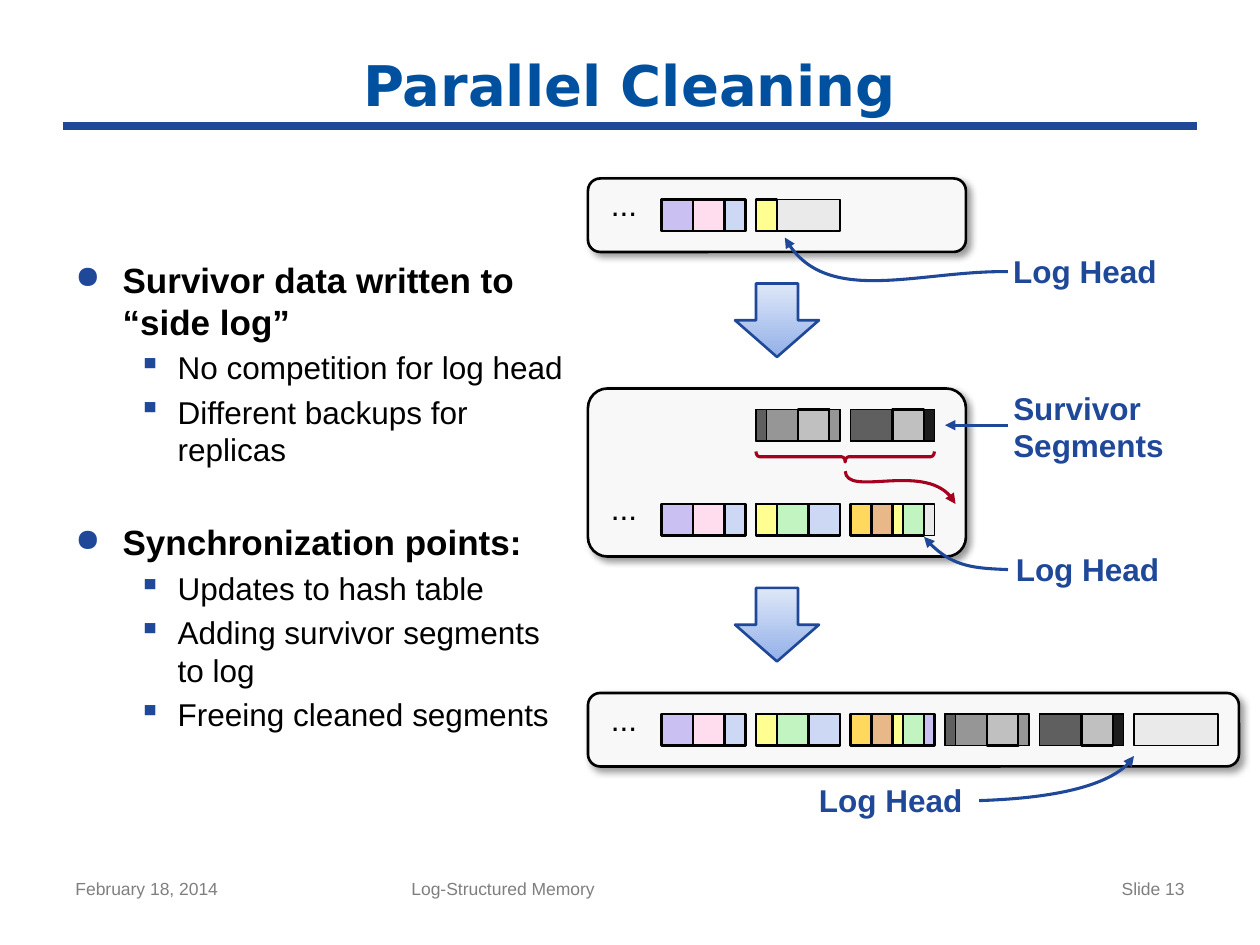
from lxml.etree import SubElement
from pptx import Presentation
from pptx.dml.color import RGBColor
from pptx.enum.shapes import MSO_CONNECTOR, MSO_SHAPE
from pptx.enum.text import MSO_ANCHOR, PP_ALIGN
from pptx.oxml.ns import qn
from pptx.util import Pt

PX = 9525
UNIT = 8
COLORS = {
    "blue": "1F4899", "title": "0050A0", "red": "A5001E", "black": "000000",
    "footer": "7F7F7F", "frame": "F8F8F8", "free": "EAEAEA",
    "arrow_top": "DEE7F8", "arrow_bottom": "93B0E9",
    "violet": "CBC0F2", "pink": "FFDDEE", "sky": "CCD8F4", "yellow": "FFFF91",
    "green": "C2F4C2", "gold": "FFD85D", "tan": "E8B888",
    "dark": "5F5F5F", "mid": "969696", "light": "C0C0C0", "ink": "1C1C1C",
}
RGB = {name: RGBColor.from_string(value) for name, value in COLORS.items()}
THIN_OUTLINES = {"free", "dark", "mid", "ink"}

prs = Presentation()
prs.slide_width, prs.slide_height = 960 * PX, 720 * PX
slide = prs.slides.add_slide(prs.slide_layouts[6])
shapes = slide.shapes


def add_preset(kind, box, fill, line, width):
    shape = shapes.add_shape(kind, *[v * PX for v in box])
    shape.shadow.inherit = False
    if fill:
        shape.fill.solid()
        shape.fill.fore_color.rgb = RGB[fill]
    else:
        shape.fill.background()
    shape.line.color.rgb = RGB[line]
    shape.line.width = Pt(width)
    return shape


def add_text(lines, box, size, color, bold=False, align=PP_ALIGN.LEFT,
             font="Arial", wrap=True, inset=True):
    frame = shapes.add_textbox(*[v * PX for v in box]).text_frame
    frame.word_wrap = wrap
    if not inset:
        frame.margin_left = frame.margin_right = 0
        frame.margin_top = frame.margin_bottom = 0
    for i, line in enumerate(lines):
        paragraph = frame.add_paragraph() if i else frame.paragraphs[0]
        paragraph.alignment = align
        run = paragraph.add_run()
        run.text = line
        run.font.size, run.font.bold, run.font.name = Pt(size), bold, font
        run.font.color.rgb = RGB[color]
    return frame


header_rule = shapes.add_connector(MSO_CONNECTOR.STRAIGHT, 48 * PX, 96 * PX, 912 * PX, 96 * PX)
header_rule.line.color.rgb = RGB["blue"]
header_rule.line.width = Pt(4.5)
SubElement(header_rule.element.spPr, qn("a:effectLst"))

for box, corner in [
    ((448, 528, 496, 56), 0.167),
    ((448, 296, 288, 128), 0.116),
    ((448, 136, 288, 56), 0.167),
]:
    log_frame = add_preset(MSO_SHAPE.ROUNDED_RECTANGLE, box, "frame", "black", 1.5)
    log_frame.adjustments[0] = corner
    effects = log_frame.element.spPr.find(qn("a:effectLst"))
    shadow = SubElement(effects, qn("a:outerShdw"), blurRad=str(Pt(4)), dist=str(Pt(3)),
                        dir="2700000", algn="tl", rotWithShape="0")
    shadow_color = SubElement(shadow, qn("a:srgbClr"), val=COLORS["black"])
    SubElement(shadow_color, qn("a:alpha"), val="40000")

title = add_text(["Parallel Cleaning"], (48, 32, 864, 64), 32, "title", True,
                 PP_ALIGN.CENTER, "DejaVu Sans")
title.vertical_anchor = MSO_ANCHOR.MIDDLE

points = [
    (0, "Survivor data written to “side log”", 6),
    (1, "No competition for log head", 3.6),
    (1, "Different backups for replicas", 3.6),
    (0, "Synchronization points:", 30),
    (1, "Updates to hash table", 3.6),
    (1, "Adding survivor segments to log", 3.6),
    (1, "Freeing cleaned segments", 3.6),
]
LEVELS = [(20, True, 36, 36, "●", 90), (18, False, 78, 30, "▪", 100)]
body = add_text([text for _, text, _ in points], (48, 192, 392, 488), 20, "black")
for paragraph, (level, _, gap) in zip(body.paragraphs, points):
    size, bold, margin, hanging, bullet, bullet_size = LEVELS[level]
    paragraph.level = level
    paragraph.space_before = Pt(gap)
    paragraph.runs[0].font.size = Pt(size)
    paragraph.runs[0].font.bold = bold
    props = paragraph._p.get_or_add_pPr()
    props.set("marL", str(margin * PX))
    props.set("indent", str(-hanging * PX))
    SubElement(SubElement(props, qn("a:buClr")), qn("a:srgbClr"), val=COLORS["blue"])
    SubElement(props, qn("a:buSzPct"), val=str(bullet_size * 1000))
    SubElement(props, qn("a:buChar"), char=bullet)

for text, left, width, align in [
    ("February 18, 2014", 48, 224, PP_ALIGN.LEFT),
    ("Log-Structured Memory", 304, 360, PP_ALIGN.LEFT),
    ("Slide 13", 688, 224, PP_ALIGN.RIGHT),
]:
    add_text([text], (left, 664, width, 41), 10, "footer", align=align)

first = [("violet", 3), ("pink", 3), ("sky", 2)]
second = [("yellow", 2), ("green", 3), ("sky", 3)]
third = [("gold", 2), ("tan", 2), ("yellow", 1), ("green", 2)]
survivors = [
    [("dark", 1), ("mid", 3), ("light", 3), ("mid", 1)],
    [("dark", 4), ("light", 3), ("ink", 1)],
]
log_rows = [
    (152, 0, [first, [("yellow", 2)]]),
    (312, 1, survivors),
    (384, 0, [first, second, third]),
    (544, 0, [first, second, third + [("violet", 1)], *survivors, []]),
]
for top, first_slot, segments in log_rows:
    for slot, entries in enumerate(segments, first_slot):
        left = 504 + 72 * slot
        add_preset(MSO_SHAPE.RECTANGLE, (left, top, 8 * UNIT, 24), "free", "black", 1)
        for color, units in entries:
            outline = 1 if color in THIN_OUTLINES else 1.5
            add_preset(MSO_SHAPE.RECTANGLE, (left, top, units * UNIT, 24), color, "black", outline)
            left += units * UNIT

for top in (136, 368, 529):
    add_text(["..."], (456, top, 39, 38), 18, "black", align=PP_ALIGN.CENTER, wrap=False)

for lines, box in [
    (["Log Head"], (772, 192, 110, 29)),
    (["Survivor", "Segments"], (772, 296, 116, 59)),
    (["Log Head"], (774, 419, 110, 29)),
    (["Log Head"], (624, 595, 110, 29)),
]:
    add_text(lines, box, 18, "blue", True, wrap=False, inset=False)

for top in (216, 448):
    step_arrow = add_preset(MSO_SHAPE.DOWN_ARROW, (560, top, 64, 56), None, "blue", 1.5)
    step_arrow.fill.gradient()
    step_arrow.fill.gradient_angle = 270
    for stop, position, color in zip(step_arrow.fill.gradient_stops, (0, 1),
                                     ("arrow_top", "arrow_bottom")):
        stop.position = position
        stop.color.rgb = RGB[color]

survivor_brace = add_preset(MSO_SHAPE.LEFT_BRACE, (640, 280, 8, 136), None, "red", 1.75)
survivor_brace.adjustments[0] = 0.338
survivor_brace.rotation = 270

survivor_pointer = shapes.add_connector(MSO_CONNECTOR.STRAIGHT, 768 * PX, 324 * PX, 720 * PX, 324 * PX)
pointers = [(survivor_pointer, "blue")]
for color, start, *bends, end in [
    ("blue", (768, 207), (702, 206), (627, 235), (598, 181)),
    ("blue", (768, 434), (743, 433), (723, 432), (704, 409)),
    ("red", (644, 359), (645, 379), (710, 349), (728, 384)),
    ("blue", (746, 610), (808, 608), (854, 595), (864, 576)),
]:
    builder = shapes.build_freeform(*start, scale=PX)
    builder.add_line_segments([end], close=False)
    curve = builder.convert_to_shape()
    curve.shadow.inherit = False
    curve.fill.background()
    segment = next(curve.element.iter(qn("a:lnTo")))
    bezier = SubElement(segment.getparent(), qn("a:cubicBezTo"))
    segment.getparent().remove(segment)
    left, top = min(start[0], end[0]), min(start[1], end[1])
    for x, y in [*bends, end]:
        SubElement(bezier, qn("a:pt"), x=str(x - left), y=str(y - top))
    pointers.append((curve, color))

for pointer, color in pointers:
    pointer.line.color.rgb = RGB[color]
    pointer.line.width = Pt(1.75)
    SubElement(pointer.element.spPr.find(qn("a:ln")), qn("a:tailEnd"), type="triangle")
SubElement(survivor_pointer.element.spPr, qn("a:effectLst"))

prs.save("out.pptx")
